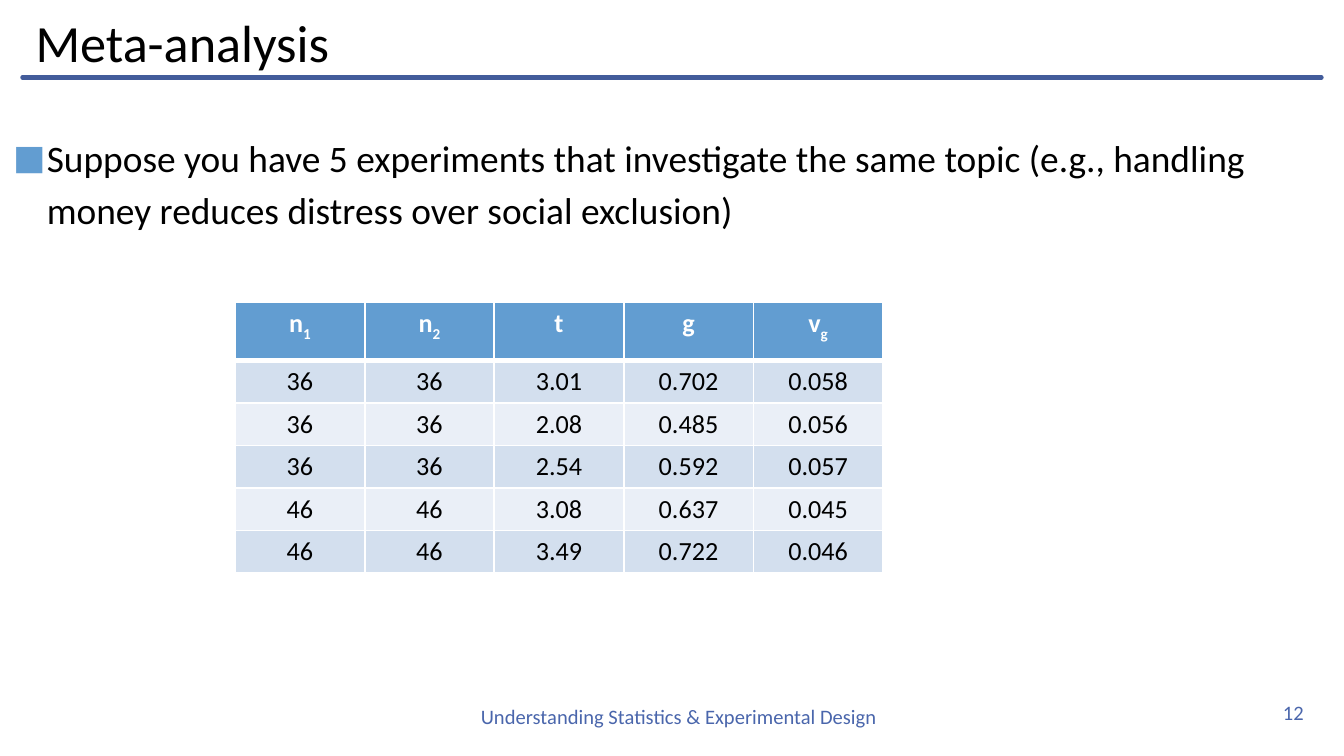
from lxml import etree
from pptx import Presentation
from pptx.dml.color import RGBColor
from pptx.enum import shapes, text
from pptx.oxml.ns import qn
from pptx.util import Pt

FONT = "Calibri"
BLACK, WHITE, INDIGO, BLUE = "000000", "FFFFFF", "4A66AC", "629DD1"
BANDS = ("D3DFEE", "EAEFF7")
HEADER = (("n", "1"), ("n", "2"), ("t", ""), ("g", ""), ("v", "g"))
ROWS = (
    ("36", "36", "3.01", "0.702", "0.058"),
    ("36", "36", "2.08", "0.485", "0.056"),
    ("36", "36", "2.54", "0.592", "0.057"),
    ("46", "46", "3.08", "0.637", "0.045"),
    ("46", "46", "3.49", "0.722", "0.046"),
)


def rgb(value):
    return RGBColor.from_string(value)


def add_run(p, content, size, color, bold=False, subscript=False):
    r = p.add_run()
    r.text = content
    r.font.name = FONT
    r.font.size = Pt(size)
    r.font.bold = bold
    r.font.color.rgb = rgb(color)
    if subscript:
        r._r.get_or_add_rPr().set("baseline", "-25000")


def add_text(s, box, content, size, color, align=text.PP_ALIGN.LEFT,
             anchor=text.MSO_ANCHOR.TOP):
    """Add a one-paragraph text box and return the paragraph."""
    tf = s.shapes.add_textbox(*map(Pt, box)).text_frame
    tf.word_wrap = True
    tf.vertical_anchor = anchor
    p = tf.paragraphs[0]
    p.alignment = align
    add_run(p, content, size, color)
    return p


def set_bullet(p, char, color, percent, indent):
    pPr = p._p.get_or_add_pPr()
    pPr.set("marL", str(Pt(indent)))
    pPr.set("indent", str(-Pt(indent)))
    clr = etree.SubElement(pPr, qn("a:buClr"))
    etree.SubElement(clr, qn("a:srgbClr"), val=color)
    etree.SubElement(pPr, qn("a:buSzPct"), val=str(percent * 1000))
    etree.SubElement(pPr, qn("a:buFont"), typeface=FONT)
    etree.SubElement(pPr, qn("a:buChar"), char=char)


def add_rule(s, x1, x2, y, color, width):
    line = s.shapes.add_connector(
        shapes.MSO_CONNECTOR.STRAIGHT, Pt(x1), Pt(y), Pt(x2), Pt(y))
    line.line.color.rgb = rgb(color)
    line.line.width = Pt(width)
    line.line._get_or_add_ln().set("cap", "rnd")
    etree.SubElement(line._element.spPr, qn("a:effectLst"))


def style_cell(cell, fill, top, bottom):
    """Fill the cell and draw white borders of the given top and bottom widths."""
    cell.margin_left = cell.margin_right = Pt(7.2)
    cell.margin_top = cell.margin_bottom = Pt(3)
    tcPr = cell._tc.get_or_add_tcPr()
    for side, width in (("L", 1), ("R", 1), ("T", top), ("B", bottom)):
        ln = etree.SubElement(tcPr, qn(f"a:ln{side}"), w=str(Pt(width)))
        solid = etree.SubElement(ln, qn("a:solidFill"))
        etree.SubElement(solid, qn("a:srgbClr"), val=WHITE)
    cell.fill.solid()
    cell.fill.fore_color.rgb = rgb(fill)
    p = cell.text_frame.paragraphs[0]
    p.alignment = text.PP_ALIGN.CENTER
    return p


def add_results_table(s, x, y, col_width, header_height, row_height):
    n_rows, n_cols = len(ROWS) + 1, len(HEADER)
    height = header_height + row_height * len(ROWS)
    table = s.shapes.add_table(n_rows, n_cols, Pt(x), Pt(y),
                               Pt(col_width * n_cols), Pt(height)).table
    for col in table.columns:
        col.width = Pt(col_width)
    for i, row in enumerate(table.rows):
        row.height = Pt(row_height if i else header_height)

    for j, (symbol, index) in enumerate(HEADER):
        p = style_cell(table.cell(0, j), BLUE, top=1, bottom=3)
        add_run(p, symbol, 14, WHITE, bold=True)
        if index:
            add_run(p, index, 14, WHITE, bold=True, subscript=True)
    for i, values in enumerate(ROWS, start=1):
        for j, value in enumerate(values):
            p = style_cell(table.cell(i, j), BANDS[(i - 1) % 2],
                           top=3 if i == 1 else 1, bottom=1)
            add_run(p, value, 14, BLACK)


def main():
    prs = Presentation()
    prs.slide_width, prs.slide_height = Pt(720), Pt(405)
    s = prs.slides.add_slide(prs.slide_layouts[6])

    add_text(s, (250.5, 373.5, 243, 21),
             "Understanding Statistics & Experimental Design", 11, INDIGO)
    add_text(s, (631.5, 371.5, 74, 21.5), "12", 11, INDIGO,
             align=text.PP_ALIGN.RIGHT)
    add_rule(s, 12, 708, 41.5, "435C9B", 2.25)
    add_text(s, (12, -7, 652, 49.5), "Meta-analysis", 28, BLACK,
             anchor=text.MSO_ANCHOR.BOTTOM)

    p = add_text(s, (0, 65.5, 703, 73),
                 "Suppose you have 5 experiments that investigate the same topic "
                 "(e.g., handling money reduces distress over social exclusion)",
                 20, BLACK)
    set_bullet(p, "■", BLUE, percent=92, indent=18)
    p.line_spacing = 1.15
    p.space_after = Pt(4.5)

    add_results_table(s, 126, 162, col_width=69.4, header_height=31,
                      row_height=22.4)
    prs.save("out.pptx")


if __name__ == "__main__":
    main()
